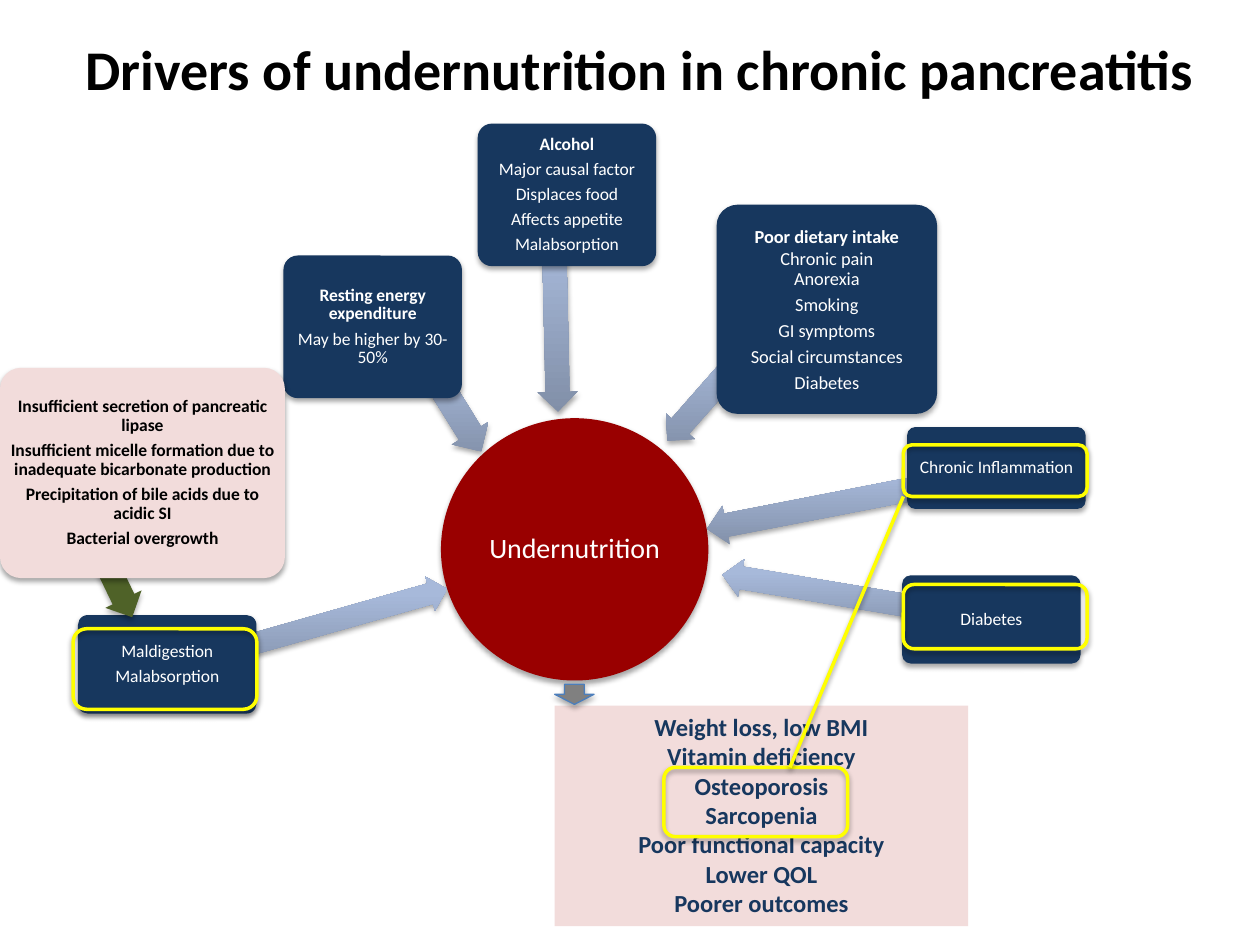
from lxml import etree
from pptx import Presentation
from pptx.dml.color import RGBColor
from pptx.enum.shapes import MSO_CONNECTOR, MSO_SHAPE
from pptx.enum.text import MSO_ANCHOR, PP_ALIGN
from pptx.oxml.ns import qn
from pptx.util import Pt

ROUNDED = MSO_SHAPE.ROUNDED_RECTANGLE
OVAL = MSO_SHAPE.OVAL
RECTANGLE = MSO_SHAPE.RECTANGLE
LEFT_ARROW = MSO_SHAPE.LEFT_ARROW
DOWN_ARROW = MSO_SHAPE.DOWN_ARROW
STRAIGHT = MSO_CONNECTOR.STRAIGHT
CENTER = PP_ALIGN.CENTER
MIDDLE = MSO_ANCHOR.MIDDLE
TOP = MSO_ANCHOR.TOP

FONT = "Calibri"
COLORS = {
    "navy": "17375E", "red": "990000", "pink": "F2DCDB", "green": "4F6228",
    "grey": "808080", "blue": "4B7EBC", "yellow": "FFFF00", "white": "FFFFFF",
    "black": "000000", "arrow_dark": "818FA8", "arrow_light": "A7B9DA",
}


def color(name):
    return RGBColor.from_string(COLORS[name])


def add_shadow(item, opacity=35):
    effects = etree.SubElement(item._element.spPr, qn("a:effectLst"))
    shadow = etree.SubElement(effects, qn("a:outerShdw"), blurRad=str(Pt(3.1)),
                              dist=str(Pt(1.8)), dir="5400000", rotWithShape="0")
    tint = etree.SubElement(shadow, qn("a:srgbClr"), val=COLORS["black"])
    etree.SubElement(tint, qn("a:alpha"), val=str(opacity * 1000))


def add_block(page, kind, box, fill=None, line=None, width=2, shadow=True):
    block = page.shapes.add_shape(kind, *map(Pt, box))
    if fill:
        block.fill.solid()
        block.fill.fore_color.rgb = color(fill)
    else:
        block.fill.background()
    if line:
        block.line.color.rgb = color(line)
        block.line.width = Pt(width)
    else:
        block.line.fill.background()
    if shadow:
        add_shadow(block)
    else:
        block.shadow.inherit = False
    return block


def write(block, lines, size, ink, bold_count=0, tight_from=0, margin=None, anchor=MIDDLE):
    frame = block.text_frame
    frame.word_wrap = True
    frame.vertical_anchor = anchor
    if margin is not None:
        frame.margin_left = frame.margin_right = Pt(margin)
        frame.margin_top = frame.margin_bottom = Pt(margin)
    for index, line in enumerate(lines):
        para = frame.paragraphs[0] if index == 0 else frame.add_paragraph()
        para.text = line
        para.alignment = CENTER
        if index >= tight_from:
            para.line_spacing = 0.9
            para.space_after = Pt(3.5)
        para.font.name = FONT
        para.font.size = Pt(size)
        para.font.bold = index < bold_count
        para.font.color.rgb = color(ink)


def add_title(page, box, text):
    title = page.shapes.add_textbox(*map(Pt, box))
    write(title, [text], 32, "black", bold_count=1, tight_from=1)


def add_arrow(page, box, rotation, fill=None):
    arrow = add_block(page, LEFT_ARROW, box, fill or "arrow_light", shadow=False)
    arrow.adjustments[0] = 0.6
    arrow.adjustments[1] = 0.5
    arrow.rotation = rotation
    if not fill:
        arrow.fill.gradient()
        arrow.fill.gradient_angle = 90
        stops = arrow.fill.gradient_stops
        for stop, name, position in zip(stops, ("arrow_dark", "arrow_light"), (0, 0.8)):
            stop.color.rgb = color(name)
            stop.position = position
        arrow._element.spPr.find(qn("a:gradFill")).set("rotWithShape", "0")
    arrow._element.spPr.remove(arrow._element.spPr.find(qn("a:effectLst")))
    add_shadow(arrow)


def add_factor(page, box, lines, arrow_box, rotation, bold_count=0, size=10,
               tight_from=0, fill="navy", ink="white", arrow_fill=None):
    add_arrow(page, arrow_box, rotation, arrow_fill)
    factor = add_block(page, ROUNDED, box, fill)
    factor.adjustments[0] = 0.1
    write(factor, lines, size, ink, bold_count, tight_from, margin=1.5)


def add_hub(page, box, text):
    hub = add_block(page, OVAL, box, "red")
    write(hub, [text], 16, "white", margin=0.75)


def add_outcomes(page, box, lines):
    outcomes = add_block(page, RECTANGLE, box, "pink", shadow=False)
    write(outcomes, lines, 14, "navy", bold_count=len(lines),
          tight_from=len(lines), anchor=TOP)
    left, top = box[:2]
    add_block(page, DOWN_ARROW, (left, top - 12.2, 22.5, 11.5), "grey", "blue", 0.75)


def add_highlights(page, boxes, start, end):
    for box in boxes:
        add_block(page, ROUNDED, box, line="yellow")
    link = page.shapes.add_connector(STRAIGHT, *map(Pt, start + end))
    link.line.color.rgb = color("yellow")
    link.line.width = Pt(2)
    add_shadow(link, 38)


def main():
    deck = Presentation()
    deck.slide_width, deck.slide_height = Pt(720), Pt(540)
    page = deck.slides.add_slide(deck.slide_layouts[6])

    add_hub(page, (252, 239, 152.8, 149.9), "Undernutrition")
    add_factor(page, (44.6, 351.5, 102, 56.3), ["Maldigestion", "Malabsorption"],
               (101.5, 347.8, 157, 20.2), 164.2)
    add_factor(page, (409.5, 117, 126, 119.5),
               ["Poor dietary intake", "Chronic pain", "Anorexia", "Smoking",
                "GI symptoms", "Social circumstances", "Diabetes"],
               (368, 211, 79.2, 22.3), 311.4, bold_count=1, size=10.5, tight_from=2)
    add_factor(page, (162, 146, 102, 81.5),
               ["Resting energy expenditure", "May be higher by 30-50%"],
               (221.8, 216, 69.8, 24.5), 238.3, bold_count=1)
    add_factor(page, (273, 70.6, 102, 81.5),
               ["Alcohol", "Major causal factor", "Displaces food",
                "Affects appetite", "Malabsorption"],
               (257, 163.4, 121, 23), 268.7, bold_count=1)
    add_factor(page, (0, 210.2, 162.8, 120.2),
               ["Insufficient secretion of pancreatic lipase",
                "Insufficient micelle formation due to inadequate bicarbonate production",
                "Precipitation of bile acids due to acidic SI",
                "Bacterial overgrowth"],
               (38.9, 318.2, 51.1, 23), 244.2, bold_count=4,
               fill="pink", ink="black", arrow_fill="green")
    add_factor(page, (518.4, 244, 102, 46.8), ["Chronic Inflammation"],
               (402.5, 275.8, 159.8, 22.3), 349)
    add_factor(page, (515.5, 328.8, 102, 50.4), ["Diabetes"],
               (411.8, 330.5, 156.2, 21.6), 9.5)

    add_title(page, (5.8, 5.8, 720, 66.2),
              "Drivers of undernutrition in chronic pancreatitis")
    add_outcomes(page, (317, 403.2, 236.2, 126),
                 ["Weight loss, low BMI", "Vitamin deficiency", "Osteoporosis",
                  "Sarcopenia", "Poor functional capacity", "Lower QOL",
                  "Poorer outcomes"])
    add_highlights(page, [(41.8, 359.3, 105, 46), (379.4, 438.5, 105, 39.6),
                          (516.2, 334, 105, 36.7), (516.2, 254.2, 105, 29.5)],
                   (516.2, 283.7), (451.4, 438.5))
    deck.save("out.pptx")


if __name__ == "__main__":
    main()
